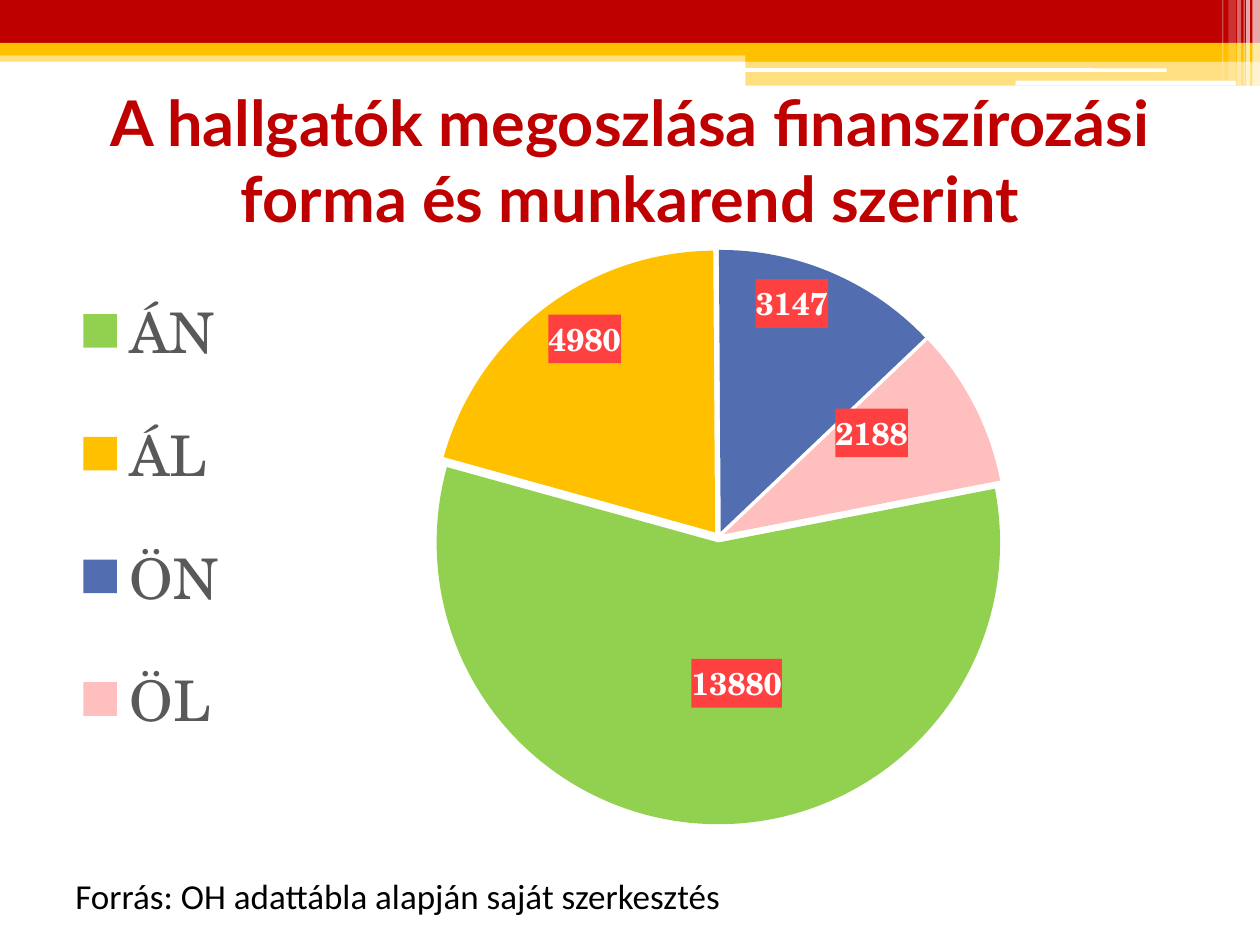
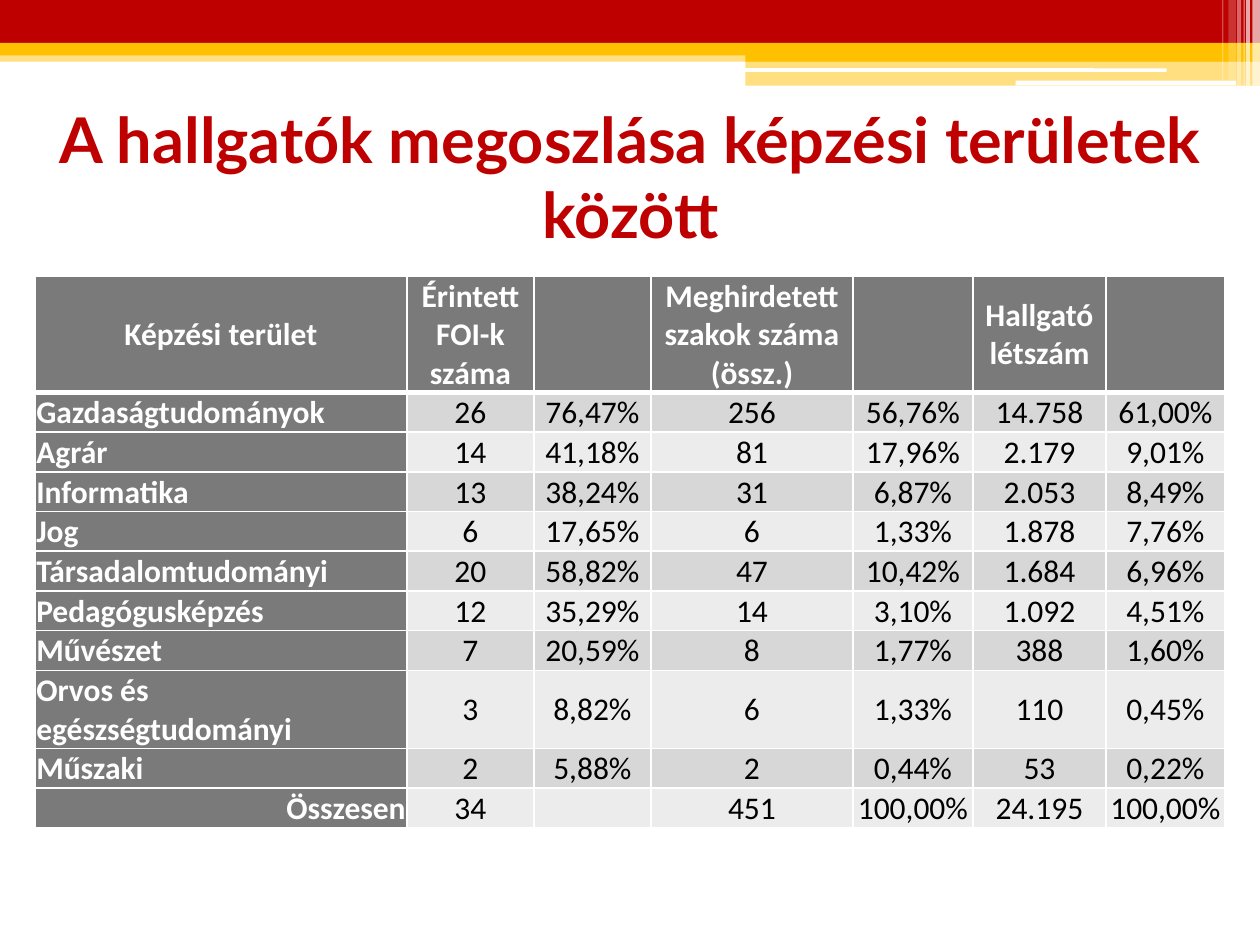
from lxml import etree
from pptx import Presentation
from pptx import util as u
from pptx.chart import data
from pptx.dml import color
from pptx.enum import chart as ch, shapes, text
from pptx.oxml import ns, parse_xml

Pt = u.Pt
RED, GOLD, WHITE, BLACK = "BF0000", "FFC000", "FFFFFF", "000000"
GREY, LEGEND_GREY, LABEL_RED = "7A7A7A", "595959", "FF4040"
ROW_FILLS = ("D7D7D7", "ECECEC")
SERIF = "TeX Gyre Schola"
RECT, ROUND = shapes.MSO_SHAPE.RECTANGLE, shapes.MSO_SHAPE.ROUNDED_RECTANGLE
LEFT, CENTER, RIGHT = (text.PP_ALIGN.LEFT, text.PP_ALIGN.CENTER,
                       text.PP_ALIGN.RIGHT)

# Header bands: left, top, width, height, colour, opacity in percent
BANDS = [
    (0, 28.8, 720, 6.5, GOLD, 50),
    (0, 0, 720, 24.5, RED, 100),
    (0, 24.5, 720, 7.2, GOLD, 100),
    (426, 28, 294, 7.2, GOLD, 100),
    (426, 35, 294, 14, GOLD, 50),
]
ROUNDED_LINES = [(425.5, 39, 241.2, 2), (580.3, 46.1, 126, 2.7)]
# Stripes in the right corner: left, width, height, opacity
STRIPES = [
    (715.7, 4.3, 49, 65), (712.1, 2.2, 49, 65), (710.6, 0.7, 49, 60),
    (707, 2.2, 49, 40), (702, 4.3, 46, 20), (698.4, 0.7, 46, 30),
]

FUNDING = {"ÁN": (13880, "92D050"), "ÁL": (4980, GOLD),
           "ÖN": (3147, "526DB0"), "ÖL": (2188, "FFBFBF")}

COLUMN_WIDTHS = (212.5, 72.6, 66.9, 115.4, 68.6, 76, 68)
HEADER = ("Képzési terület", "Érintett FOI-k száma", "",
          "Meghirdetett szakok száma (össz.)", "", "Hallgató létszám", "")
FIELDS = [
    ("Gazdaságtudományok", "26", "76,47%", "256", "56,76%", "14.758", "61,00%"),
    ("Agrár", "14", "41,18%", "81", "17,96%", "2.179", "9,01%"),
    ("Informatika", "13", "38,24%", "31", "6,87%", "2.053", "8,49%"),
    ("Jog", "6", "17,65%", "6", "1,33%", "1.878", "7,76%"),
    ("Társadalomtudományi", "20", "58,82%", "47", "10,42%", "1.684", "6,96%"),
    ("Pedagógusképzés", "12", "35,29%", "14", "3,10%", "1.092", "4,51%"),
    ("Művészet", "7", "20,59%", "8", "1,77%", "388", "1,60%"),
    ("Orvos és egészségtudományi", "3", "8,82%", "6", "1,33%", "110", "0,45%"),
    ("Műszaki", "2", "5,88%", "2", "0,44%", "53", "0,22%"),
    ("Összesen", "34", "", "451", "100,00%", "24.195", "100,00%"),
]


def rgb(value):
    return color.RGBColor.from_string(value)


def paint(fill, value, opacity=100):
    fill.solid()
    fill.fore_color.rgb = rgb(value)
    if opacity < 100:
        clr = fill._xPr.find(".//" + ns.qn("a:srgbClr"))
        etree.SubElement(clr, ns.qn("a:alpha"), val=str(opacity * 1000))


def style_font(font, name, size, value, bold=False):
    font.name, font.size, font.bold = name, Pt(size), bold
    font.color.rgb = rgb(value)


def write(tf, words, *, name="Calibri", size=18, value=BLACK, bold=False,
          align=LEFT):
    p = tf.paragraphs[0]
    p.alignment = align
    r = p.add_run()
    r.text = words
    style_font(r.font, name, size, value, bold)


def add_band(s, box, value, opacity=100, kind=RECT):
    sp = s.shapes.add_shape(kind, *map(Pt, box))
    sp.shadow.inherit = False
    sp.line.fill.background()
    paint(sp.fill, value, opacity)


def add_text(s, box, words, **style):
    tf = s.shapes.add_textbox(*map(Pt, box)).text_frame
    tf.word_wrap = True
    tf.vertical_anchor = text.MSO_ANCHOR.MIDDLE
    write(tf, words, **style)


def add_slide(prs, title, title_box):
    s = prs.slides.add_slide(prs.slide_layouts[6])
    for *box, value, opacity in BANDS:
        add_band(s, box, value, opacity)
    for box in ROUNDED_LINES:
        add_band(s, box, WHITE, kind=ROUND)
    for left, width, height, opacity in STRIPES:
        add_band(s, (left, 0, width, height), WHITE, opacity)
    add_text(s, title_box, title, name="Lato", size=36, value=RED, bold=True,
             align=CENTER)
    return s


# Chart parts
def chart_xml(tag, content="", **attrs):
    attr_text = "".join(f' {k}="{v}"' for k, v in attrs.items())
    return parse_xml(f'<c:{tag} {ns.nsdecls("c", "a")}{attr_text}>'
                     f'{content}</c:{tag}>')


def manual_layout(**values):
    parts = "".join(f'<c:{k} val="{v}"/>' for k, v in values.items())
    return chart_xml("layout", f"<c:manualLayout>{parts}</c:manualLayout>")


def style_labels(labels, position):
    style_font(labels.font, SERIF, 18, WHITE, True)
    labels.position = position


def add_pie(s, box):
    cd = data.CategoryChartData()
    cd.categories = list(FUNDING)
    cd.add_series("Series 1", [count for count, _ in FUNDING.values()])
    chart = s.shapes.add_chart(ch.XL_CHART_TYPE.PIE, *map(Pt, box), cd).chart
    chart.has_title = False
    style_font(chart.font, SERIF, 10, BLACK)

    # Legend
    chart.has_legend = True
    legend = chart.legend
    legend.position = ch.XL_LEGEND_POSITION.LEFT
    legend.include_in_layout = False
    style_font(legend.font, SERIF, 32, LEGEND_GREY)
    legend._element.find(ns.qn("c:legendPos")).addnext(manual_layout(
        xMode="edge", yMode="edge", x=0, y=0, w=0.18, h=0.92))

    # Plot area and slices
    plot = chart.plots[0]
    pie = plot._element
    pie.append(chart_xml("firstSliceAng", val=79))
    area = pie.getparent()
    for old in area.findall(ns.qn("c:layout")):
        area.remove(old)
    area.insert(0, manual_layout(
        layoutTarget="inner", xMode="edge", yMode="edge",
        x=0.325, y=0, w=0.483, h=0.996))
    series = plot.series[0]
    ser = series._element
    ser.find(ns.qn("c:tx")).addnext(chart_xml("explosion", val=2))
    for i, (_, value) in enumerate(FUNDING.values()):
        paint(series.points[i].format.fill, value)

    # Value labels, two of them moved from their usual place
    place = ch.XL_LABEL_POSITION
    labels = series.data_labels
    labels.show_value = True
    style_labels(labels, place.INSIDE_END)
    for i, position, dx in ((0, place.CENTER, 0.02),
                            (3, place.INSIDE_END, -0.05)):
        style_labels(series.points[i].data_label, position)
        idx = ser.xpath(f"c:dLbls/c:dLbl/c:idx[@val='{i}']")[0]
        idx.addnext(manual_layout(x=dx, y=0))
    for tx in ser.xpath("c:dLbls//c:txPr"):
        tx.addprevious(chart_xml(
            "spPr", f'<a:solidFill><a:srgbClr val="{LABEL_RED}"/></a:solidFill>'))


# Table parts
def add_borders(cell, bottom):
    tc_pr = cell._tc.get_or_add_tcPr()
    for side, width in (("L", 1), ("R", 1), ("T", 1), ("B", bottom)):
        ln = etree.SubElement(tc_pr, ns.qn("a:ln" + side), w=str(Pt(width)))
        fill = etree.SubElement(ln, ns.qn("a:solidFill"))
        etree.SubElement(fill, ns.qn("a:srgbClr"), val=WHITE)


def fill_cell(cell, words, fill, bottom=1, **style):
    cell.margin_left = cell.margin_right = cell.margin_top = Pt(0.72)
    cell.margin_bottom = 0
    cell.vertical_anchor = text.MSO_ANCHOR.MIDDLE
    add_borders(cell, bottom)
    paint(cell.fill, fill)
    if words:
        write(cell.text_frame, words, **style)


def add_fields_table(s, left, top):
    rows = [HEADER] + FIELDS
    heights = [66.6] + [44.7 if len(row[0]) > 20 else 22.7 for row in FIELDS]
    table = s.shapes.add_table(
        len(rows), len(HEADER), Pt(left), Pt(top),
        Pt(sum(COLUMN_WIDTHS)), Pt(sum(heights))).table
    for column, width in zip(table.columns, COLUMN_WIDTHS):
        column.width = Pt(width)
    for i, (row, height) in enumerate(zip(rows, heights)):
        table.rows[i].height = Pt(height)
        for j, words in enumerate(row):
            head = i == 0 or j == 0
            align = CENTER
            if i and j == 0:
                align = RIGHT if i == len(FIELDS) else LEFT
            fill_cell(table.cell(i, j), words,
                      GREY if head else ROW_FILLS[(i - 1) % 2],
                      bottom=1 if i else 3, value=WHITE if head else BLACK,
                      bold=head, align=align)


def main():
    prs = Presentation()
    prs.slide_width, prs.slide_height = Pt(720), Pt(540)

    # Students by funding and schedule
    s = add_slide(prs, "A hallgatók megoszlása finanszírozási forma és "
                  "munkarend szerint", (36, 49, 648, 84.2))
    add_pie(s, (25.2, 142.6, 680.4, 329.8))
    add_text(s, (36, 496, 648, 31.7),
             "Forrás: OH adattábla alapján saját szerkesztés", size=20)

    # Students by field of study
    s = add_slide(prs, "A hallgatók megoszlása képzési területek között",
                  (20, 58.3, 680.4, 84.2))
    add_fields_table(s, 20, 157.7)

    prs.save("out.pptx")


if __name__ == "__main__":
    main()
